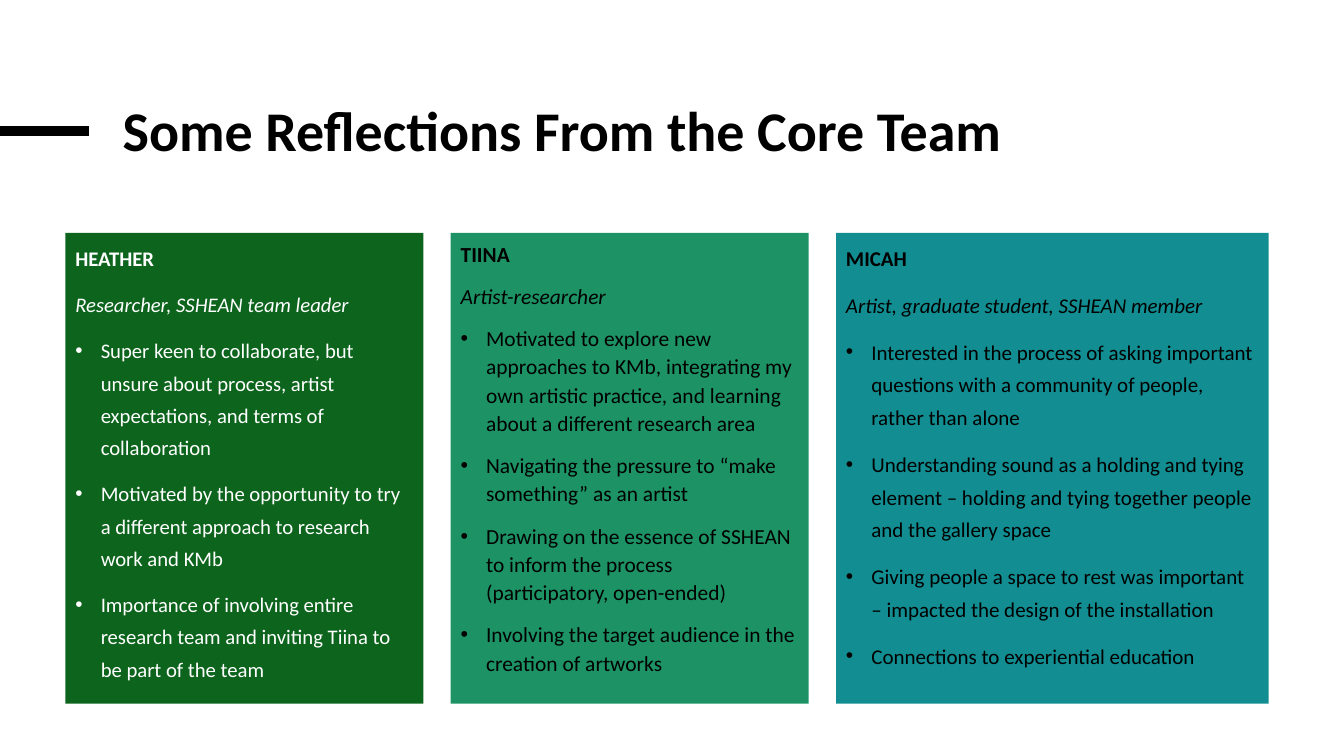
"""Build a slide with three columns of reflections from the core team."""
from dataclasses import dataclass

from lxml.etree import SubElement
from pptx import Presentation
from pptx.dml.color import RGBColor
from pptx.enum.shapes import MSO_CONNECTOR, MSO_SHAPE
from pptx.enum.text import MSO_ANCHOR, PP_ALIGN
from pptx.oxml.ns import qn
from pptx.slide import Slide
from pptx.text.text import TextFrame
from pptx.util import Cm, Pt

BLACK = RGBColor(0x00, 0x00, 0x00)
WHITE = RGBColor(0xFF, 0xFF, 0xFF)
DARK_GREEN = RGBColor(0x0D, 0x64, 0x1D)
GREEN = RGBColor(0x1D, 0x93, 0x65)
TEAL = RGBColor(0x12, 0x8E, 0x92)

FONT = "Calibri"
COLUMNS_LEFT, COLUMNS_TOP = 1.65, 5.87
COLUMN_HEIGHT, COLUMN_GAP = 11.86, 0.69
BULLET_INDENT = Cm(0.64)
FRAME_FORMAT = {
    "word_wrap": True,
    "vertical_anchor": MSO_ANCHOR.TOP,
    "margin_left": Cm(0.25),
    "margin_right": Cm(0.25),
    "margin_top": Cm(0.13),
    "margin_bottom": Cm(0.13),
}


@dataclass(frozen=True)
class Member:
    """One team member's column."""

    name: str
    role: str
    reflections: tuple[str, ...]
    width: float
    fill: RGBColor
    ink: RGBColor
    size: float
    line_spacing: float


MEMBERS = (
    Member(
        "HEATHER",
        "Researcher, SSHEAN team leader",
        (
            "Super keen to collaborate, but unsure about process, artist "
            "expectations, and terms of collaboration",
            "Motivated by the opportunity to try a different approach to "
            "research work and KMb",
            "Importance of involving entire research team and inviting Tiina "
            "to be part of the team",
        ),
        9.02, DARK_GREEN, WHITE, 14.8, 1.3,
    ),
    Member(
        "TIINA",
        "Artist-researcher",
        (
            "Motivated to explore new approaches to KMb, integrating my own "
            "artistic practice, and learning about a different research area",
            "Navigating the pressure to “make something” as an artist",
            "Drawing on the essence of SSHEAN to inform the process "
            "(participatory, open-ended)",
            "Involving the target audience in the creation of artworks",
        ),
        9.02, GREEN, BLACK, 15.3, 1.1,
    ),
    Member(
        "MICAH",
        "Artist, graduate student, SSHEAN member",
        (
            "Interested in the process of asking important questions with a "
            "community of people, rather than alone",
            "Understanding sound as a holding and tying element – holding and "
            "tying together people and the gallery space",
            "Giving people a space to rest was important – impacted the "
            "design of the installation",
            "Connections to experiential education",
        ),
        10.9, TEAL, BLACK, 15, 1.3,
    ),
)


def apply_format(target: object, values: dict[str, object]) -> None:
    """Set each named attribute on the target."""
    for attribute, value in values.items():
        setattr(target, attribute, value)


def write_paragraphs(
    frame: TextFrame,
    lines: list[tuple[str, dict[str, object], bool]],
    size: float,
    ink: RGBColor,
    spacing: dict[str, object],
) -> None:
    """Fill a frame with (text, font format, bulleted) lines."""
    apply_format(frame, FRAME_FORMAT)
    for index, (text, emphasis, bulleted) in enumerate(lines):
        paragraph = frame.add_paragraph() if index else frame.paragraphs[0]
        apply_format(paragraph, {"alignment": PP_ALIGN.LEFT} | spacing)
        run = paragraph.add_run()
        run.text = text
        apply_format(run.font, {"name": FONT, "size": Pt(size)} | emphasis)
        run.font.color.rgb = ink
        if bulleted:
            properties = paragraph._p.get_or_add_pPr()
            properties.set("marL", str(BULLET_INDENT))
            properties.set("indent", str(-BULLET_INDENT))
            SubElement(properties, qn("a:buFont"), typeface="Arial")
            SubElement(properties, qn("a:buChar"), char="•")


def draw_heading(slide: Slide) -> None:
    """Draw the title and the thick rule on its left."""
    rule = slide.shapes.add_connector(
        MSO_CONNECTOR.STRAIGHT, Cm(0), Cm(3.3), Cm(2.24), Cm(3.3)
    )
    rule.line.color.rgb = BLACK
    rule.line.width = Pt(6.75)
    SubElement(rule._element.spPr, qn("a:effectLst"))
    title = slide.shapes.add_textbox(Cm(2.84), Cm(2.54), Cm(27.56), Cm(3.61))
    write_paragraphs(
        title.text_frame,
        [("Some Reflections From the Core Team", {"bold": True}, False)],
        40, BLACK, {"line_spacing": 0.85},
    )


def draw_member(slide: Slide, member: Member, left: float) -> None:
    """Draw one member's coloured column."""
    column = slide.shapes.add_shape(
        MSO_SHAPE.RECTANGLE,
        Cm(left), Cm(COLUMNS_TOP), Cm(member.width), Cm(COLUMN_HEIGHT),
    )
    column.shadow.inherit = False
    column.fill.solid()
    column.fill.fore_color.rgb = member.fill
    column.line.fill.background()
    lines = [
        (member.name, {"bold": True}, False),
        (member.role, {"italic": True}, False),
        *((reflection, {}, True) for reflection in member.reflections),
    ]
    spacing = {"line_spacing": member.line_spacing, "space_before": Pt(10)}
    write_paragraphs(column.text_frame, lines, member.size, member.ink, spacing)


def main() -> None:
    """Build and save the presentation."""
    presentation = Presentation()
    apply_format(
        presentation, {"slide_width": Cm(33.87), "slide_height": Cm(19.05)}
    )
    slide = presentation.slides.add_slide(presentation.slide_layouts[6])
    draw_heading(slide)
    left = COLUMNS_LEFT
    for member in MEMBERS:
        draw_member(slide, member, left)
        left += member.width + COLUMN_GAP
    presentation.save("out.pptx")


if __name__ == "__main__":
    main()
